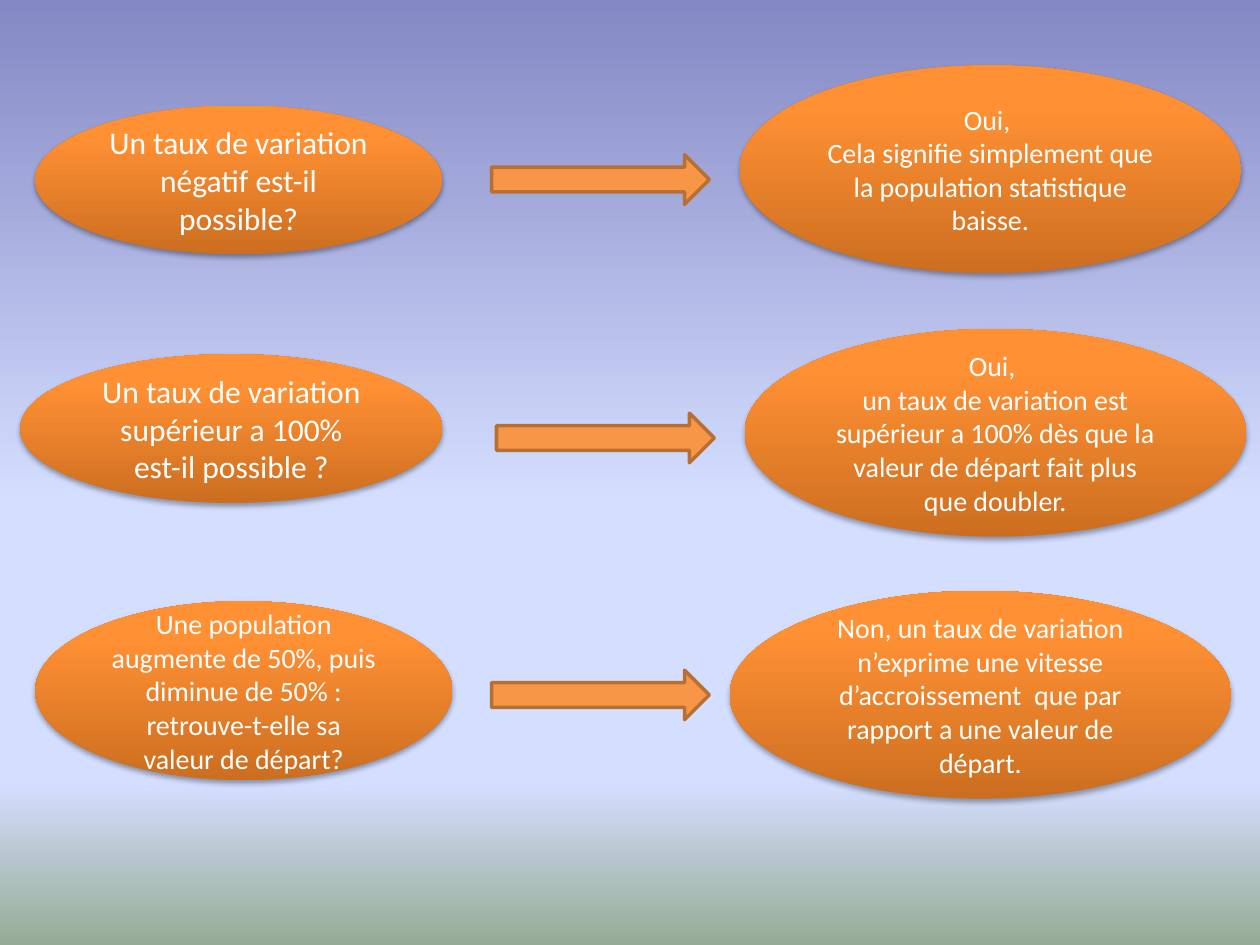
from copy import deepcopy
from lxml.etree import SubElement
from pptx import Presentation
from pptx.dml.color import RGBColor
from pptx.enum.shapes import MSO_SHAPE
from pptx.enum.text import MSO_ANCHOR, PP_ALIGN
from pptx.oxml.ns import qn
from pptx.util import Cm, Pt


def paint(fill, *colours, positions=(), angle=0):
    """Solid fill for one colour, linear gradient for several."""
    if len(colours) == 1:
        fill.solid()
        fill.fore_color.rgb = RGBColor.from_string(colours[0])
        return
    fill.gradient()
    fill.gradient_angle = angle
    stop_list = fill.gradient_stops[0]._gs.getparent()
    while len(stop_list) < len(colours):
        stop_list.append(deepcopy(stop_list[0]))
    for stop, colour, position in zip(fill.gradient_stops, colours, positions):
        stop.color.rgb = RGBColor.from_string(colour)
        stop.position = position


def write(box, text, size=16, font="Calibri", colour="FFFFFF", align=PP_ALIGN.CENTER):
    frame = box.text_frame
    frame.word_wrap = True
    frame.vertical_anchor = MSO_ANCHOR.MIDDLE
    for index, line in enumerate(text.split("\n")):
        para = frame.paragraphs[0] if index == 0 else frame.add_paragraph()
        para.alignment = align
        span = para.add_run()
        span.text = line
        span.font.size = Pt(size)
        span.font.name = font
        paint(span.font.fill, colour)


deck = Presentation()
deck.slide_width, deck.slide_height = Cm(25.4), Cm(19.05)
page = deck.slides.add_slide(deck.slide_layouts[6])

# Background
paint(page.background.fill, "8488C4", "D4DEFF", "D4DEFF", "96AB94",
      positions=(0, 0.53, 0.83, 1), angle=270)

# Question and answer ellipses: left, top, width, height in cm, text size, text
ANSWER = (10.11, 4.19)
ellipses = [
    (0.71, 2.13, 8.2, 3, 18, "Un taux de variation négatif est-il possible?"),
    (0.41, 7.14, 8.51, 3, 18, "Un taux de variation supérieur a 100% est-il possible ?"),
    (0.71, 12.12, 8.41, 3.61, 16,
     "Une population augmente de 50%, puis diminue de 50% : "
     "retrouve-t-elle sa valeur de départ?"),
    (14.91, 1.32, *ANSWER, 16,
     "Oui, \nCela signifie simplement que la population statistique baisse."),
    (15.01, 6.63, *ANSWER, 16,
     "Oui, \nun taux de variation est supérieur a 100% dès que "
     "la valeur de départ fait plus que doubler."),
    (14.71, 11.91, *ANSWER, 16,
     "Non, un taux de variation n’exprime une vitesse d’accroissement  "
     "que par rapport a une valeur de départ."),
]
for left, top, width, height, size, text in ellipses:
    ellipse = page.shapes.add_shape(
        MSO_SHAPE.OVAL, Cm(left), Cm(top), Cm(width), Cm(height))
    paint(ellipse.fill, "CC6E20", "FF9034", "FF9136", positions=(0, 0.8, 1), angle=90)
    ellipse.line.fill.background()
    write(ellipse, text, size=size)

    # Soft shadow below the ellipse
    ellipse.shadow.inherit = False
    effects = ellipse._element.spPr.find(qn("a:effectLst"))
    shadow = SubElement(effects, qn("a:outerShdw"), blurRad=str(Pt(3.1)),
                        dist=str(Pt(1.8)), dir="5400000", rotWithShape="0")
    shade = SubElement(shadow, qn("a:srgbClr"), val="000000")
    SubElement(shade, qn("a:alpha"), val="35000")

# Arrows from each question to its answer
for left, top in [(9.91, 3.12), (10.01, 8.33), (9.91, 13.51)]:
    arrow = page.shapes.add_shape(
        MSO_SHAPE.RIGHT_ARROW, Cm(left), Cm(top), Cm(4.39), Cm(1))
    arrow.shadow.inherit = False
    paint(arrow.fill, "F79646")
    paint(arrow.line.fill, "B76F34")
    arrow.line.width = Pt(2)

deck.save("out.pptx")
